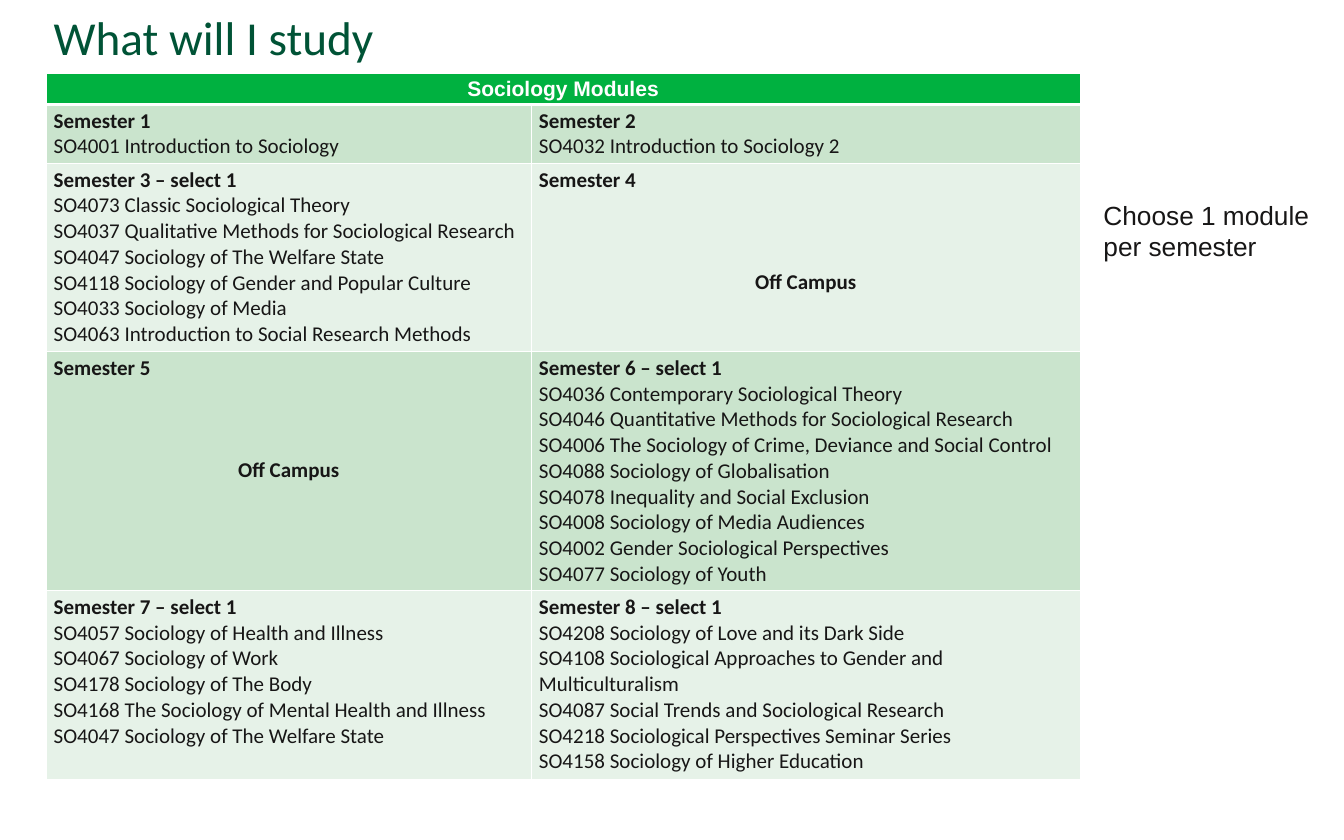
"""Build the slide listing the sociology modules by semester."""
from lxml import etree
from pptx import Presentation
from pptx.dml.color import RGBColor
from pptx.enum import text
from pptx.oxml import ns
from pptx.util import Inches, Pt

GREEN, DARK_GREEN, INK, WHITE = "00B140", "005336", "171616", "FFFFFF"
BANDS = ["CAE4CD", "E6F2E8"]
OFF_CAMPUS = "Off Campus"
SEMESTERS = [
    ["Semester 1", "SO4001 Introduction to Sociology"],
    ["Semester 2", "SO4032 Introduction to Sociology 2"],
    ["Semester 3 – select 1",
     "SO4073 Classic Sociological Theory",
     "SO4037 Qualitative Methods for Sociological Research",
     "SO4047 Sociology of The Welfare State",
     "SO4118 Sociology of Gender and Popular Culture",
     "SO4033 Sociology of Media",
     "SO4063 Introduction to Social Research Methods"],
    ["Semester 4", OFF_CAMPUS],
    ["Semester 5", OFF_CAMPUS],
    ["Semester 6 – select 1",
     "SO4036 Contemporary Sociological Theory",
     "SO4046 Quantitative Methods for Sociological Research",
     "SO4006 The Sociology of Crime, Deviance and Social Control",
     "SO4088 Sociology of Globalisation",
     "SO4078 Inequality and Social Exclusion",
     "SO4008 Sociology of Media Audiences",
     "SO4002 Gender Sociological Perspectives",
     "SO4077 Sociology of Youth"],
    ["Semester 7 – select 1",
     "SO4057 Sociology of Health and Illness",
     "SO4067 Sociology of Work",
     "SO4178 Sociology of The Body",
     "SO4168 The Sociology of Mental Health and Illness",
     "SO4047 Sociology of The Welfare State"],
    ["Semester 8 – select 1",
     "SO4208 Sociology of Love and its Dark Side",
     "SO4108 Sociological Approaches to Gender and Multiculturalism",
     "SO4087 Social Trends and Sociological Research",
     "SO4218 Sociological Perspectives Seminar Series",
     "SO4158 Sociology of Higher Education"],
]
COL_WIDTHS = [6.42, 7.26]
ROW_HEIGHTS = [0.4, 0.78, 2.49, 3.16, 2.49]


def add_run(p, words, size, color, font="Calibri", bold=False):
    r = p.add_run()
    r.text = words
    r.font.size, r.font.name, r.font.bold = Pt(size), font, bold
    r.font.color.rgb = RGBColor.from_string(color)


def style_cell(cell, fill, top=1, bottom=1):
    tc_pr = cell._tc.get_or_add_tcPr()
    for side, width in zip("LRTB", [1, 1, top, bottom]):
        ln = etree.SubElement(tc_pr, ns.qn(f"a:ln{side}"), w=str(Pt(width)))
        solid = etree.SubElement(ln, ns.qn("a:solidFill"))
        etree.SubElement(solid, ns.qn("a:srgbClr"), val=WHITE)
    cell.fill.solid()
    cell.fill.fore_color.rgb = RGBColor.from_string(fill)


prs = Presentation()
prs.slide_width, prs.slide_height = Inches(17.78), Inches(11.11)
s = prs.slides.add_slide(prs.slide_layouts[5])

title = s.shapes.title
title.left, title.top = Inches(0.61), Inches(0.14)
title.width, title.height = Inches(15.33), Inches(1.14)
tf = title.text_frame
tf.auto_size = text.MSO_AUTO_SIZE.NONE
tf.vertical_anchor = text.MSO_ANCHOR.TOP
p = tf.paragraphs[0]
p.alignment = text.PP_ALIGN.LEFT
p.line_spacing = 0.9
add_run(p, "What will I study", 45, DARK_GREEN)

table = s.shapes.add_table(
    len(ROW_HEIGHTS), len(COL_WIDTHS), Inches(0.61), Inches(0.97),
    Inches(sum(COL_WIDTHS)), Inches(sum(ROW_HEIGHTS))).table
for column, width in zip(table.columns, COL_WIDTHS):
    column.width = Inches(width)
for row, height in zip(table.rows, ROW_HEIGHTS):
    row.height = Inches(height)

for cell in table.rows[0].cells:
    style_cell(cell, GREEN, bottom=3)
header = table.cell(0, 0)
header.merge(table.cell(0, 1))
header.vertical_anchor = text.MSO_ANCHOR.MIDDLE
p = header.text_frame.paragraphs[0]
p.alignment = text.PP_ALIGN.CENTER
add_run(p, "Sociology Modules", 20, WHITE, "Arial", True)

for i, (name, *modules) in enumerate(SEMESTERS):
    row, col = i // 2 + 1, i % 2
    cell = table.cell(row, col)
    style_cell(cell, BANDS[(row - 1) % 2], top=3 if row == 1 else 1)
    tf = cell.text_frame
    add_run(tf.paragraphs[0], name, 20, INK, bold=True)
    for module in modules:
        p = tf.add_paragraph()
        away = module == OFF_CAMPUS
        if away:
            p.alignment = text.PP_ALIGN.CENTER
            p.space_before = Pt(73)
        add_run(p, module, 20, INK, bold=away)

note = s.shapes.add_textbox(Inches(14.5), Inches(2.58), Inches(2.94), Inches(0.94))
note.text_frame.word_wrap = True
add_run(note.text_frame.paragraphs[0], "Choose 1 module per semester", 25, INK, "Arial")

prs.save("out.pptx")
